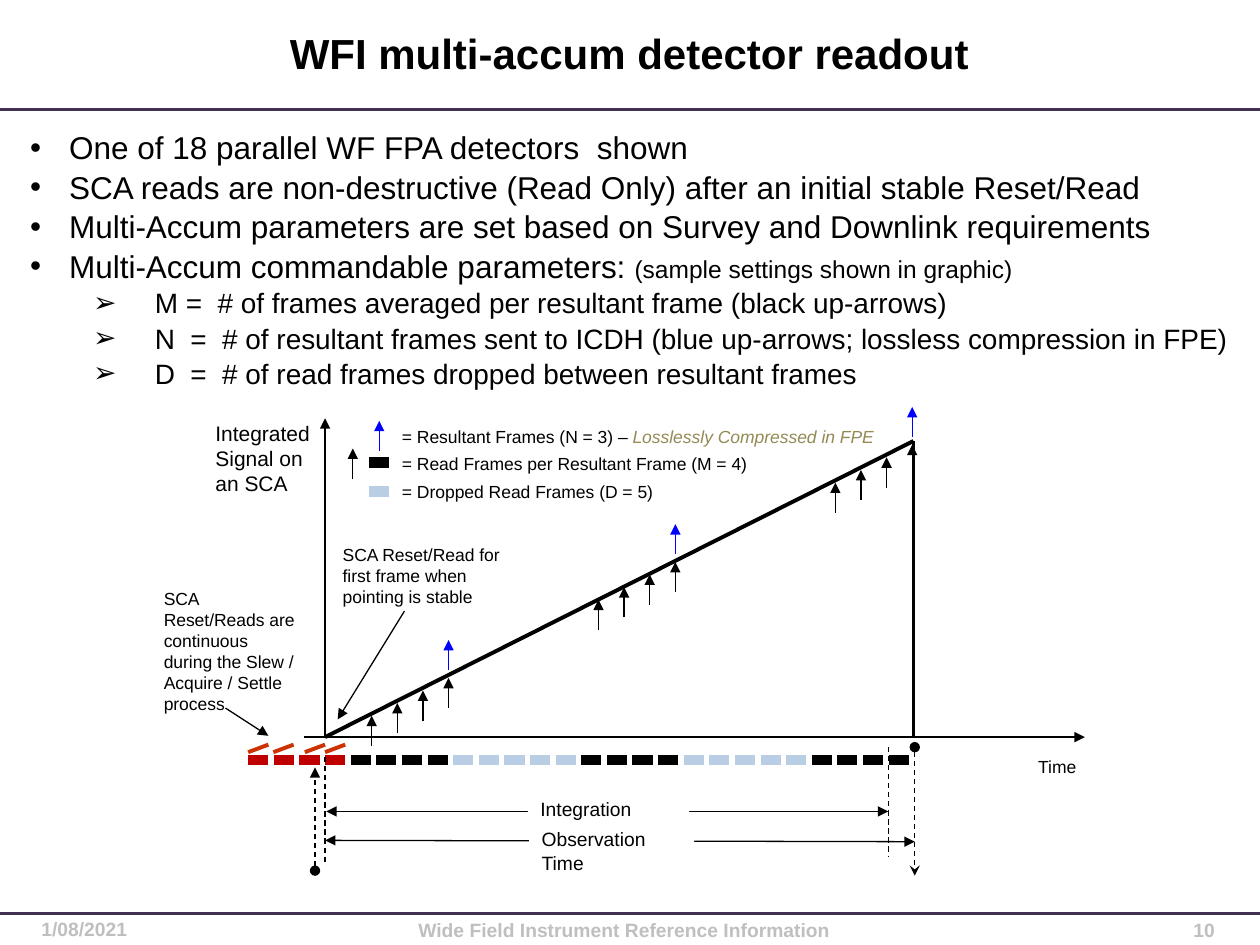
from lxml.etree import SubElement
from pptx import Presentation
from pptx.dml.color import RGBColor
from pptx.enum.dml import MSO_LINE
from pptx.enum.shapes import MSO_CONNECTOR, MSO_SHAPE
from pptx.enum.text import MSO_ANCHOR, PP_ALIGN
from pptx.oxml.ns import qn
from pptx.util import Inches, Pt

BLACK, RED, ORANGE, BLUE = "000000", "C00000", "CC3300", "0000FF"
PALE, GRAY, OLIVE, PURPLE, WHITE = "B9CDE5", "BFBFBF", "948A54", "403152", "FFFFFF"

# Content
TITLE = "WFI multi-accum detector readout"
FOOTERS = [  # text, box, alignment
    ("1/08/2021", (0.23, 7.23, 2.09, 0.29), PP_ALIGN.LEFT),
    ("Wide Field Instrument Reference Information", (1.83, 7.24, 6.25, 0.29), PP_ALIGN.CENTER),
    ("10", (8.75, 7.24, 0.99, 0.29), PP_ALIGN.RIGHT),
]
BULLETS = [  # level, runs of (text, size)
    (0, [("One of 18 parallel WF FPA detectors  shown", 18)]),
    (0, [("SCA reads are non-destructive (Read Only) after an initial stable Reset/Read", 18)]),
    (0, [("Multi-Accum parameters are set based on Survey and Downlink requirements", 18)]),
    (0, [("Multi-Accum commandable parameters: ", 18), ("(sample settings shown in graphic)", 14)]),
    (1, [("M =  # of frames averaged per resultant frame (black up-arrows)", 16)]),
    (1, [("N  =  # of resultant frames sent to ICDH (blue up-arrows; lossless compression in FPE)", 16)]),
    (1, [("D  =  # of read frames dropped between resultant frames", 16)]),
]
BULLET_STYLES = [("•", 0.31, -0.31), ("➢", 0.99, -0.49)]  # character, margin, indent
LABELS = [  # text, box, size, wrap
    ("Time", (8.19, 5.95, 0.5, 0.26), 10, False),
    ("Integrated Signal on an SCA", (1.66, 3.28, 1, 0.71), 12, True),
    ("SCA\nReset/Reads are continuous during the Slew / Acquire / Settle process",
     (1.25, 4.62, 1.16, 1.09), 10, True),
    ("SCA Reset/Read for first frame when pointing is stable", (2.67, 4.36, 1.4, 0.42), 10, True),
    ("= Dropped Read Frames (D = 5)", (3.14, 3.77, 2.12, 0.27), 10, False),
    ("= Read Frames per Resultant Frame (M = 4)", (3.14, 3.54, 2.88, 0.27), 10, False),
]
RESULTANT_LABEL = [("= Resultant Frames (N = 3) – ", BLACK), ("Losslessly Compressed in FPE", OLIVE)]
FRAME_RUNS = [(RED, 4), (BLACK, 4), (PALE, 5), (BLACK, 4), (PALE, 5), (BLACK, 4)]
READ_GROUPS = [(2.95, 5.92), (4.75, 5.0), (6.63, 4.07)]  # foot of each first read arrow
RESET_TICKS = [1.97, 2.17, 2.42, 2.58]
SPANS = [  # text, box, start and end of its arrow
    ("Integration Time", (4.19, 6.28, 1.28, 0.29), (2.59, 6.44), (7.05, 6.44)),
    ("Observation Time", (4.2, 6.52, 1.31, 0.29), (2.58, 6.67), (7.26, 6.68)),
]

# Diagram geometry
ORIGIN, PEAK = (2.58, 5.85), (7.25, 3.5)
FRAME_LEFT, FRAME_Y, FRAME_PITCH, FRAME_WIDTH = 1.97, 6.03, 0.2033, 0.16
READ_STEP_X, READ_STEP_Y, ARROW_LENGTH, RESULTANT_LIFT = 0.2033, 0.1, 0.24, 0.3


def color(value):
    return RGBColor.from_string(value)


def style_font(run, size, text_color=BLACK, bold=False, italic=False):
    font = run.font
    font.name, font.size, font.bold, font.italic = "Arial", Pt(size), bold, italic
    font.color.rgb = color(text_color)


def style_text(text_frame, size, text_color=BLACK, bold=False, align=PP_ALIGN.LEFT):
    for paragraph in text_frame.paragraphs:
        paragraph.alignment = align
        for run in paragraph.runs:
            style_font(run, size, text_color, bold)


def add_box(slide, box, wrap=True, inset=None, anchor=MSO_ANCHOR.TOP):
    text_frame = slide.shapes.add_textbox(*map(Inches, box)).text_frame
    text_frame.word_wrap = wrap
    text_frame.vertical_anchor = anchor
    if inset is not None:
        text_frame.margin_left = text_frame.margin_right = Inches(inset)
        text_frame.margin_top = text_frame.margin_bottom = Inches(inset)
    return text_frame


def add_line(slide, start, end, line_color=BLACK, width=0.75, head=None, tail=None, dashed=False):
    connector = slide.shapes.add_connector(
        MSO_CONNECTOR.STRAIGHT, *map(Inches, (*start, *end)))
    connector.line.color.rgb = color(line_color)
    connector.line.width = Pt(width)
    if dashed:
        connector.line.dash_style = MSO_LINE.DASH
    properties = connector.line._get_or_add_ln()
    for tag, kind in (("a:headEnd", head), ("a:tailEnd", tail)):
        if kind:
            SubElement(properties, qn(tag), type=kind)
    SubElement(connector._element.spPr, qn("a:effectLst"))


def add_frame(slide, left, y, frame_color):
    add_line(slide, (left, y), (left + FRAME_WIDTH, y), frame_color, 6)


def add_up_arrow(slide, x, foot, arrow_color=BLACK):
    add_line(slide, (x, foot), (x, foot - ARROW_LENGTH), arrow_color, tail="triangle")


def add_bullets(slide):
    text_frame = add_box(slide, (0.14, 0.97, 9.91, 2.12))
    for index, (level, runs) in enumerate(BULLETS):
        paragraph = text_frame.paragraphs[0] if index == 0 else text_frame.add_paragraph()
        paragraph.level = level
        if index:
            paragraph.space_before = Pt(0.9)
        character, margin, indent = BULLET_STYLES[level]
        properties = paragraph._p.get_or_add_pPr()
        properties.set("marL", str(Inches(margin)))
        properties.set("indent", str(Inches(indent)))
        SubElement(properties, qn("a:buFont"), typeface="Arial")
        SubElement(properties, qn("a:buChar"), char=character)
        for text, size in runs:
            run = paragraph.add_run()
            run.text = text
            style_font(run, size)


def add_labels(slide):
    for text, box, size, wrap in LABELS:
        text_frame = add_box(slide, box, wrap, 0.05, MSO_ANCHOR.MIDDLE)
        text_frame.text = text
        style_text(text_frame, size)
    text_frame = add_box(slide, (3.14, 3.33, 3.92, 0.27), False, 0.05, MSO_ANCHOR.MIDDLE)
    for text, text_color in RESULTANT_LABEL:
        run = text_frame.paragraphs[0].add_run()
        run.text = text
        style_font(run, 10, text_color, italic=text_color == OLIVE)


def add_diagram(slide):
    # Axes and signal ramp
    add_line(slide, (2.41, ORIGIN[1]), (8.61, ORIGIN[1]), width=1, tail="triangle")
    add_line(slide, ORIGIN, (ORIGIN[0], 3.32), width=1, tail="triangle")
    add_line(slide, ORIGIN, PEAK, width=2.25)
    add_line(slide, PEAK, (PEAK[0], ORIGIN[1]), width=2.25)

    # Row of frames and reset ticks
    frame_colors = [frame_color for frame_color, count in FRAME_RUNS for _ in range(count)]
    for index, frame_color in enumerate(frame_colors):
        add_frame(slide, FRAME_LEFT + index * FRAME_PITCH, FRAME_Y, frame_color)
    for left in RESET_TICKS:
        add_line(slide, (left, 5.97), (left + FRAME_WIDTH, 5.91), ORANGE, 2.25)

    # Four reads and one resultant frame per group
    for left, foot in READ_GROUPS:
        for index in range(4):
            x, y = left + index * READ_STEP_X, foot - index * READ_STEP_Y
            add_up_arrow(slide, x, y)
        add_up_arrow(slide, x, y - RESULTANT_LIFT, BLUE)

    # Legend keys
    add_up_arrow(slide, 3.01, 3.58, BLUE)
    add_up_arrow(slide, 2.8, 3.8)
    add_frame(slide, 2.93, 3.67, BLACK)
    add_frame(slide, 2.93, 3.9, PALE)

    # Callout arrows
    add_line(slide, (1.79, 5.62), (2.13, 5.84), tail="triangle")
    add_line(slide, (3.21, 4.85), (2.68, 5.71), tail="triangle")

    # Time markers
    add_line(slide, (2.58, 6.01), (2.58, 6.85), dashed=True)
    add_line(slide, (7.05, 5.93), (7.05, 6.8), dashed=True)
    add_line(slide, (2.5, 6.91), (2.5, 6.09), head="oval", tail="triangle", dashed=True)
    add_line(slide, (7.26, 5.93), (7.26, 6.95), head="oval", tail="stealth", dashed=True)

    # Time spans with their names over the arrows
    for text, box, start, end in SPANS:
        add_line(slide, start, end, head="triangle", tail="triangle")
        shape = slide.shapes.add_shape(MSO_SHAPE.RECTANGLE, *map(Inches, box))
        shape.shadow.inherit = False
        shape.fill.solid()
        shape.fill.fore_color.rgb = color(WHITE)
        shape.line.fill.background()
        shape.text_frame.text = text
        shape.text_frame.word_wrap = True
        shape.text_frame.vertical_anchor = MSO_ANCHOR.TOP
        style_text(shape.text_frame, 11)


def main():
    presentation = Presentation()
    presentation.slide_width, presentation.slide_height = Inches(10), Inches(7.5)
    slide = presentation.slides.add_slide(presentation.slide_layouts[5])

    # Title, rules and footers
    title = slide.shapes.title
    title.left, title.top, title.width, title.height = map(Inches, (1.08, 0.09, 7.83, 0.66))
    title.text_frame.text = TITLE
    title.text_frame.vertical_anchor = MSO_ANCHOR.MIDDLE
    style_text(title.text_frame, 24, bold=True, align=PP_ALIGN.CENTER)
    for y in (0.87, 7.25):
        add_line(slide, (0, y), (10, y), PURPLE, 2)
    for text, box, align in FOOTERS:
        text_frame = add_box(slide, box)
        text_frame.text = text
        style_text(text_frame, 11, GRAY, True, align)

    add_bullets(slide)
    add_labels(slide)
    add_diagram(slide)
    presentation.save("out.pptx")


if __name__ == "__main__":
    main()
